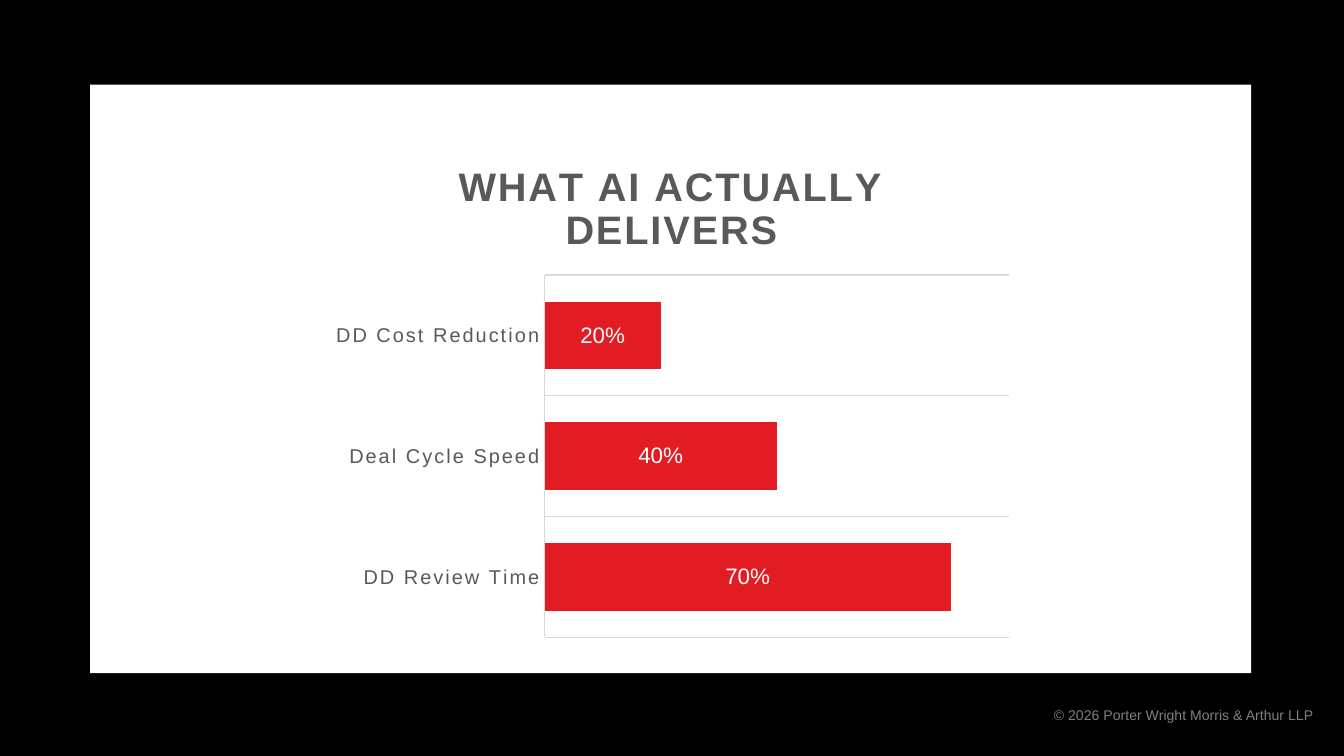
from dataclasses import dataclass
from lxml.etree import SubElement
from pptx import Presentation
from pptx.chart.data import CategoryChartData
from pptx.dml.color import RGBColor
from pptx.enum.chart import XL_CHART_TYPE, XL_LABEL_POSITION, XL_TICK_MARK
from pptx.enum.shapes import MSO_SHAPE
from pptx.enum.text import MSO_ANCHOR, PP_ALIGN
from pptx.oxml.ns import qn
from pptx.util import Inches, Pt


@dataclass
class Theme:
    face: str = "Arial"
    black: str = "000000"
    white: str = "FFFFFF"
    red: str = "E31B23"
    text: str = "595959"
    rule: str = "D9D9D9"
    note: str = "808080"
    head: float = 21.28
    axis: float = 10.64
    label: float = 12
    base: float = 10
    small: float = 7.5


theme = Theme()


def style(font, size, color, bold=False):
    font.name = theme.face
    font.size = Pt(size)
    font.bold = bold
    font.color.rgb = RGBColor.from_string(color)


# Widescreen page, 16 to 9
wide = 10
high = wide * 9 / 16
deck = Presentation()
deck.slide_width, deck.slide_height = Inches(wide), Inches(high)
slide = deck.slides.add_slide(deck.slide_layouts[6])

# Black frame and white panel
for box, color in (((0, 0, wide, high), theme.black),
                   ((0.67, 0.63, 8.64, 4.38), theme.white)):
    panel = slide.shapes.add_shape(MSO_SHAPE.RECTANGLE, *map(Inches, box))
    panel.shadow.inherit = False
    panel.fill.solid()
    panel.fill.fore_color.rgb = RGBColor.from_string(color)
    panel.line.fill.background()

# Copyright line
note = slide.shapes.add_textbox(*map(Inches, (6.49, 5.01, 3.38, 0.62))).text_frame
note.word_wrap = True
note.vertical_anchor = MSO_ANCHOR.MIDDLE
para = note.paragraphs[0]
para.alignment = PP_ALIGN.RIGHT
run = para.add_run()
run.text = "© 2026 Porter Wright Morris & Arthur LLP"
style(run.font, theme.small, theme.note)

# Bar chart
data = CategoryChartData(number_format="0%")
data.categories = ["DD Review Time", "Deal Cycle Speed", "DD Cost Reduction"]
data.add_series("Series 1", (0.7, 0.4, 0.2))
chart = slide.shapes.add_chart(
    XL_CHART_TYPE.BAR_STACKED, *map(Inches, (2.38, 1.02, 5.23, 3.8)), data).chart
style(chart.font, theme.base, theme.black)
chart.has_legend = False

# Chart title
chart.has_title = True
chart.chart_title.include_in_layout = False
run = chart.chart_title.text_frame.paragraphs[0].add_run()
run.text = "WHAT AI ACTUALLY DELIVERS"
style(run.font, theme.head, theme.text, bold=True)

# Axes
cat, val = chart.category_axis, chart.value_axis
style(cat.tick_labels.font, theme.axis, theme.text)
cat.major_tick_mark = XL_TICK_MARK.NONE
cat.has_major_gridlines = True
for line in (cat.format.line, cat.major_gridlines.format.line):
    line.color.rgb = RGBColor.from_string(theme.rule)
    line.width = Pt(0.75)
val.minimum_scale, val.maximum_scale = 0, 0.8
val.has_major_gridlines = False
val.visible = False

# Bars and their labels
plot = chart.plots[0]
plot.gap_width, plot.overlap = 79, 100
plot.vary_by_categories = False
bars = plot.series[0]
bars.format.fill.solid()
bars.format.fill.fore_color.rgb = RGBColor.from_string(theme.red)
labels = bars.data_labels
labels.show_value = True
labels.position = XL_LABEL_POSITION.CENTER
labels.number_format, labels.number_format_is_linked = "0%", False
style(labels.font, theme.label, theme.white)

# Letter spacing, in hundredths of a point
for query in (".//c:title//a:rPr", ".//c:catAx//a:defRPr"):
    for props in chart.element.xpath(query):
        props.set("spc", "120")

# Fixed plot area
area = chart.element.xpath(".//c:plotArea")[0]
for old in area.findall(qn("c:layout")):
    area.remove(old)
layout = SubElement(area, qn("c:layout"))
area.insert(0, layout)
manual = SubElement(layout, qn("c:manualLayout"))
for tag, value in (("layoutTarget", "inner"), ("xMode", "edge"), ("yMode", "edge"),
                   ("x", 0.32), ("y", 0.27), ("w", 0.66), ("h", 0.71)):
    SubElement(manual, qn(f"c:{tag}")).set("val", str(value))

deck.save("out.pptx")
